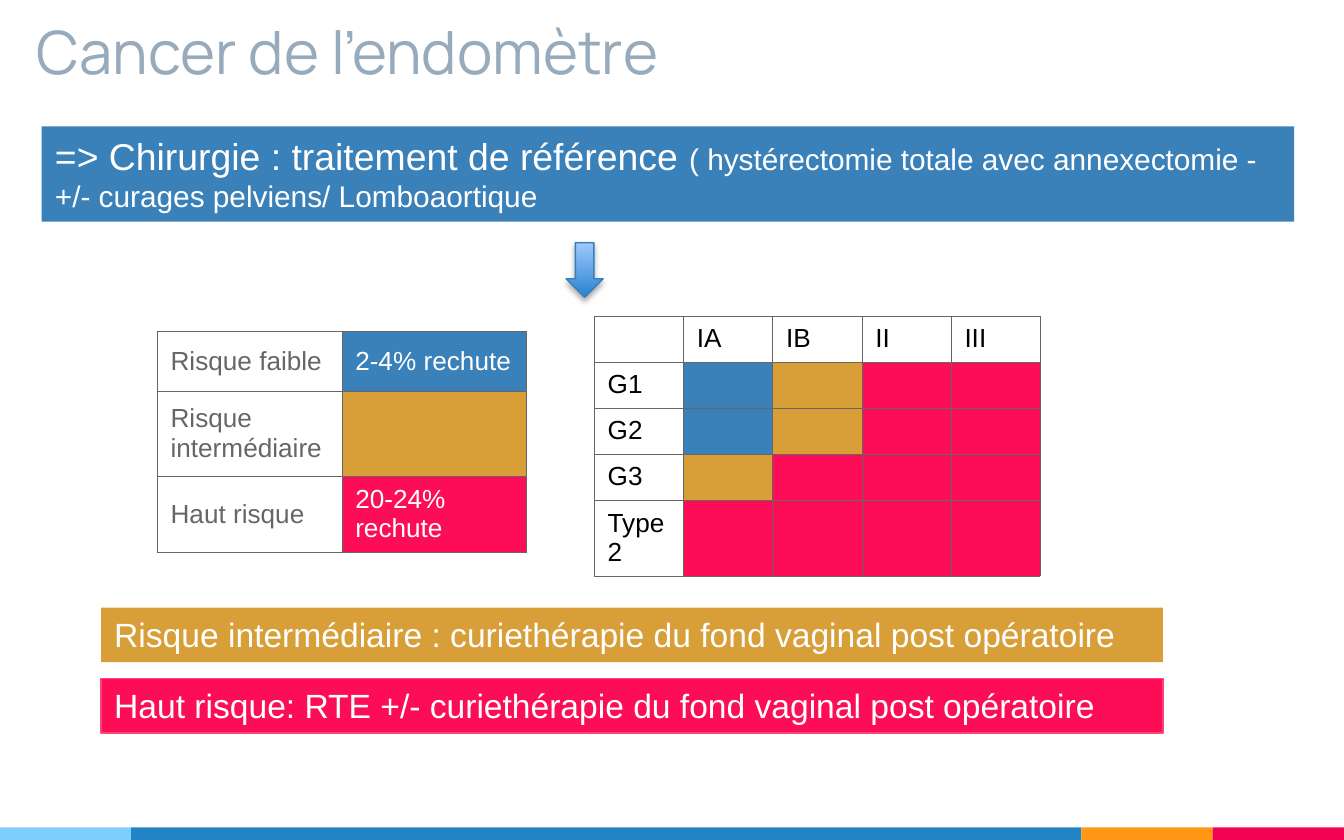
from lxml.etree import SubElement
from pptx import Presentation
from pptx.dml.color import RGBColor
from pptx.enum.shapes import MSO_SHAPE
from pptx.enum.text import MSO_ANCHOR, PP_ALIGN
from pptx.oxml import parse_xml
from pptx.oxml.ns import nsdecls, qn
from pptx.util import Cm, Pt

COLOURS = {
    "title": "97ABBC", "low": "3A81BA", "medium": "D89F39", "high": "FC0D56",
    "high_edge": "FC4478", "white": "FFFFFF", "black": "000000", "grey": "666666",
    "sky": "7ECEFD", "blue": "2185C5", "orange": "FF9715", "pink": "F20253",
    "arrow_dark": "2783CD", "arrow_light": "A0C8FF", "arrow_edge": "367EB9",
}


def rgb(name):
    return RGBColor.from_string(COLOURS[name])


def lengths(box):
    return [Cm(value) for value in box]


def add_run(paragraph, text, size, colour, font="Arial"):
    run = paragraph.add_run()
    run.text = text
    run.font.size = Pt(size)
    run.font.name = font
    run.font.color.rgb = rgb(colour)


def add_block(slide, box, fill, edge=None):
    block = slide.shapes.add_shape(MSO_SHAPE.RECTANGLE, *lengths(box))
    block.shadow.inherit = False
    block.fill.solid()
    block.fill.fore_color.rgb = rgb(fill)
    if edge:
        block.line.color.rgb = rgb(edge)
        block.line.width = Pt(0.75)
    else:
        block.line.fill.background()
    return block


def add_footer(slide, box):
    left, top, width, height = box
    side = 2.48
    bands = [("sky", side), ("blue", width - 3 * side), ("orange", side), ("pink", side)]
    for colour, band_width in bands:
        add_block(slide, (left, top, band_width, height), colour)
        left += band_width


def add_title(slide, box, text):
    frame = slide.shapes.add_textbox(*lengths(box)).text_frame
    frame.word_wrap = True
    frame.vertical_anchor = MSO_ANCHOR.BOTTOM
    frame.margin_left = frame.margin_right = Cm(0.25)
    frame.margin_top = frame.margin_bottom = Cm(0.25)
    add_run(frame.paragraphs[0], text, 32, "title", "Manrope")


def add_banner(slide, box, fill, runs, edge=None):
    frame = add_block(slide, box, fill, edge).text_frame
    frame.word_wrap = True
    frame.vertical_anchor = MSO_ANCHOR.TOP
    paragraph = frame.paragraphs[0]
    paragraph.alignment = PP_ALIGN.LEFT
    for text, size in runs:
        add_run(paragraph, text, size, "white")


def add_arrow(slide, box):
    arrow = slide.shapes.add_shape(MSO_SHAPE.DOWN_ARROW, *lengths(box))
    arrow.fill.gradient()
    arrow.fill.gradient_angle = 90
    for stop, colour, position in zip(
            arrow.fill.gradient_stops, ("arrow_dark", "arrow_light"), (0, 1)):
        stop.color.rgb = rgb(colour)
        stop.position = position
    arrow.line.color.rgb = rgb("arrow_edge")
    arrow.line.width = Pt(0.75)
    arrow._element.spPr.append(parse_xml(
        f'<a:effectLst {nsdecls("a")}><a:outerShdw blurRad="40000" dist="23000" '
        'dir="5400000" rotWithShape="0"><a:srgbClr val="000000">'
        '<a:alpha val="35000"/></a:srgbClr></a:outerShdw></a:effectLst>'))


def style_cell(cell, text, colour, fill):
    cell.vertical_anchor = MSO_ANCHOR.MIDDLE
    paragraph = cell.text_frame.paragraphs[0]
    if text:
        add_run(paragraph, text, 14, colour)
    else:
        SubElement(paragraph._p, qn("a:endParaRPr"), sz="1400")
    properties = cell._tc.get_or_add_tcPr()
    for side in ("lnL", "lnR", "lnT", "lnB"):
        properties.append(parse_xml(
            f'<a:{side} {nsdecls("a")} w="3175"><a:solidFill>'
            f'<a:srgbClr val="{COLOURS["grey"]}"/></a:solidFill></a:{side}>'))
    if fill:
        cell.fill.solid()
        cell.fill.fore_color.rgb = rgb(fill)
    else:
        cell.fill.background()


def add_grid(slide, box, row_heights, rows):
    table = slide.shapes.add_table(len(rows), len(rows[0]), *lengths(box)).table
    table.first_row = table.horz_banding = False
    for column in table.columns:
        column.width = Cm(box[2] / len(rows[0]))
    for row, height, contents in zip(table.rows, row_heights, rows):
        row.height = Cm(height)
        for cell, content in zip(row.cells, contents):
            style_cell(cell, *content)


def add_relapse_table(slide, box):
    risks = [("Risque faible", "2-4% rechute", "low"),
             ("Risque intermédiaire", "", "medium"),
             ("Haut risque", "20-24% rechute", "high")]
    rows = [[(risk, "grey", None), (relapse, "white", level)]
            for risk, relapse, level in risks]
    add_grid(slide, box, (1.13, 1.61, 1.44), rows)


def add_stage_table(slide, box):
    grades = {
        "G1": ("low", "medium", "high", "high"),
        "G2": ("low", "medium", "high", "high"),
        "G3": ("medium", "high", "high", "high"),
        "Type 2": ("high",) * 4,
    }
    rows = [[(stage, "black", None) for stage in ("", "IA", "IB", "II", "III")]]
    for grade, levels in grades.items():
        rows.append([(grade, "black", None)] + [("", "black", level) for level in levels])
    add_grid(slide, box, [0.87] * 4 + [1.44], rows)


def main():
    presentation = Presentation()
    presentation.slide_width, presentation.slide_height = Cm(25.4), Cm(15.88)
    slide = presentation.slides.add_slide(presentation.slide_layouts[6])
    add_footer(slide, (0, 15.64, 25.4, 0.24))
    add_title(slide, (0.45, 0.33, 17.96, 1.55), "Cancer de l’endomètre")
    add_banner(slide, (0.79, 2.39, 23.67, 1.8), "low", [
        ("=> Chirurgie : traitement de référence ", 20),
        ("( hystérectomie totale avec annexectomie -+/- curages pelviens/ Lomboaortique", 16),
    ])
    add_arrow(slide, (10.7, 4.59, 0.7, 1.03))
    add_relapse_table(slide, (2.97, 6.26, 6.98, 4.18))
    add_stage_table(slide, (11.23, 5.97, 8.43, 4.92))
    add_banner(slide, (1.91, 11.49, 20.07, 1.03), "medium", [
        ("Risque intermédiaire : curiethérapie du fond vaginal post opératoire", 18)])
    add_banner(slide, (1.91, 12.83, 20.07, 1.03), "high", [
        ("Haut risque: RTE +/- curiethérapie du fond vaginal post opératoire", 18)],
        "high_edge")
    presentation.save("out.pptx")


if __name__ == "__main__":
    main()
